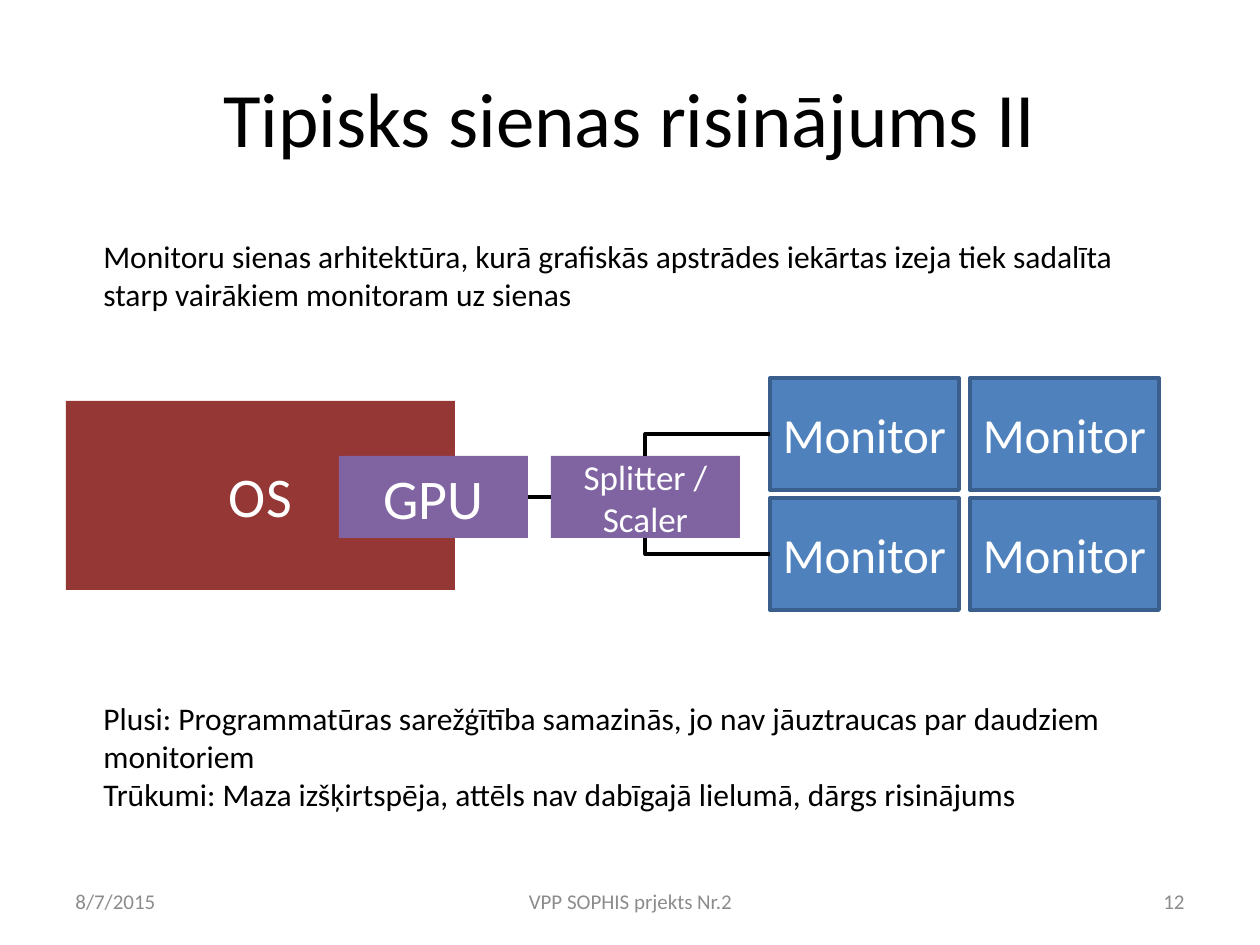
import dataclasses

import pptx
import pptx.dml.color
import pptx.enum.shapes
import pptx.enum.text
import pptx.oxml
import pptx.oxml.ns
import pptx.util

EMU_PER_PX = 914400 / 126
ALIGN = pptx.enum.text.PP_ALIGN
ANCHOR = pptx.enum.text.MSO_ANCHOR
CONNECTOR = pptx.enum.shapes.MSO_CONNECTOR
TOP, LEFT, BOTTOM, RIGHT = range(4)


@dataclasses.dataclass(frozen=True)
class Theme:
    font: str = "Calibri"
    ink: str = "000000"
    muted: str = "8C8C8C"
    light: str = "FFFFFF"
    system: str = "953735"
    graphics: str = "8064A2"
    monitor: str = "4F81BD"
    monitor_edge: str = "3A5F8C"
    line_width: float = 2.25
    title_size: int = 44
    box_size: int = 32
    monitor_size: int = 28
    splitter_size: int = 20
    body_size: int = 18
    footer_size: int = 12


THEME = Theme()


def px(*lengths):
    return [pptx.util.Emu(round(length * EMU_PER_PX)) for length in lengths]


def rgb(value):
    return pptx.dml.color.RGBColor.from_string(value)


def set_attributes(target, values):
    for name, value in values.items():
        setattr(target, name, value)


def write_text(shape, lines, size, color, alignment, anchor):
    frame = shape.text_frame
    set_attributes(frame, {"word_wrap": True, "vertical_anchor": anchor})
    frame.text = "\n".join(lines)
    for paragraph in frame.paragraphs:
        paragraph.alignment = alignment
        for run in paragraph.runs:
            set_attributes(run.font, {"name": THEME.font, "size": pptx.util.Pt(size)})
            run.font.color.rgb = rgb(color)


def format_line(line, color):
    line.color.rgb = rgb(color)
    line.width = pptx.util.Pt(THEME.line_width)


def place_title(slide, text, box):
    title = slide.shapes.title
    set_attributes(title, dict(zip(("left", "top", "width", "height"), px(*box))))
    write_text(title, [text], THEME.title_size, THEME.ink, ALIGN.CENTER, ANCHOR.MIDDLE)


def add_body(slide, lines, box):
    body = slide.shapes.add_textbox(*px(*box))
    write_text(body, lines, THEME.body_size, THEME.ink, ALIGN.LEFT, ANCHOR.TOP)
    body.text_frame.auto_size = pptx.enum.text.MSO_AUTO_SIZE.SHAPE_TO_FIT_TEXT


def add_footer(slide, text, left, width, alignment):
    footer = slide.shapes.add_textbox(*px(left, 876, width, 50))
    write_text(footer, [text], THEME.footer_size, THEME.muted, alignment, ANCHOR.MIDDLE)


def add_box(slide, text, box, fill, size, edge=None):
    shape = slide.shapes.add_shape(pptx.enum.shapes.MSO_SHAPE.RECTANGLE, *px(*box))
    shape.shadow.inherit = False
    shape.fill.solid()
    shape.fill.fore_color.rgb = rgb(fill)
    if edge:
        format_line(shape.line, edge)
    else:
        shape.line.fill.background()
    write_text(shape, [text], size, THEME.light, ALIGN.CENTER, ANCHOR.MIDDLE)
    return shape


def add_link(slide, kind, start, start_side, end, end_side):
    connector = slide.shapes.add_connector(kind, 0, 0, 0, 0)
    connector.begin_connect(start, start_side)
    connector.end_connect(end, end_side)
    format_line(connector.line, THEME.ink)
    properties = connector._element.spPr
    properties.append(pptx.oxml.parse_xml("<a:effectLst %s/>" % pptx.oxml.ns.nsdecls("a")))
    if kind == CONNECTOR.ELBOW:
        properties.find(pptx.oxml.ns.qn("a:prstGeom")).set("prst", "bentConnector2")


def add_diagram(slide):
    add_box(slide, "OS", (66, 401, 389, 189), THEME.system, THEME.box_size)
    gpu = add_box(slide, "GPU", (339, 456, 189, 82), THEME.graphics, THEME.box_size)
    splitter = add_box(slide, "Splitter / Scaler", (551, 456, 189, 82),
                       THEME.graphics, THEME.splitter_size)
    monitors = [
        [add_box(slide, "Monitor", (770 + 200 * column, 378 + 120 * row, 189, 112),
                 THEME.monitor, THEME.monitor_size, THEME.monitor_edge)
         for column in range(2)]
        for row in range(2)
    ]
    for row, side in zip(monitors, (TOP, BOTTOM)):
        add_link(slide, CONNECTOR.ELBOW, row[0], LEFT, splitter, side)
    add_link(slide, CONNECTOR.STRAIGHT, gpu, RIGHT, splitter, LEFT)


def main():
    presentation = pptx.Presentation()
    presentation.slide_width, presentation.slide_height = px(1260, 945)
    slide = presentation.slides.add_slide(presentation.slide_layouts[5])
    place_title(slide, "Tipisks sienas risinājums II", (63, 38, 1134, 158))
    add_footer(slide, "8/7/2015", 63, 294, ALIGN.LEFT)
    add_footer(slide, "VPP SOPHIS prjekts Nr.2", 431, 399, ALIGN.CENTER)
    add_footer(slide, "12", 903, 294, ALIGN.RIGHT)
    add_body(slide, ["Monitoru sienas arhitektūra, kurā grafiskās apstrādes iekārtas izeja "
                     "tiek sadalīta starp vairākiem monitoram uz sienas"], (91, 231, 1043, 89))
    add_body(slide, ["Plusi: Programmatūras sarežģītība samazinās, jo nav jāuztraucas "
                     "par daudziem monitoriem",
                     "Trūkumi: Maza izšķirtspēja, attēls nav dabīgajā lielumā, "
                     "dārgs risinājums"], (91, 693, 1075, 127))
    add_diagram(slide)
    presentation.save("out.pptx")


if __name__ == "__main__":
    main()
